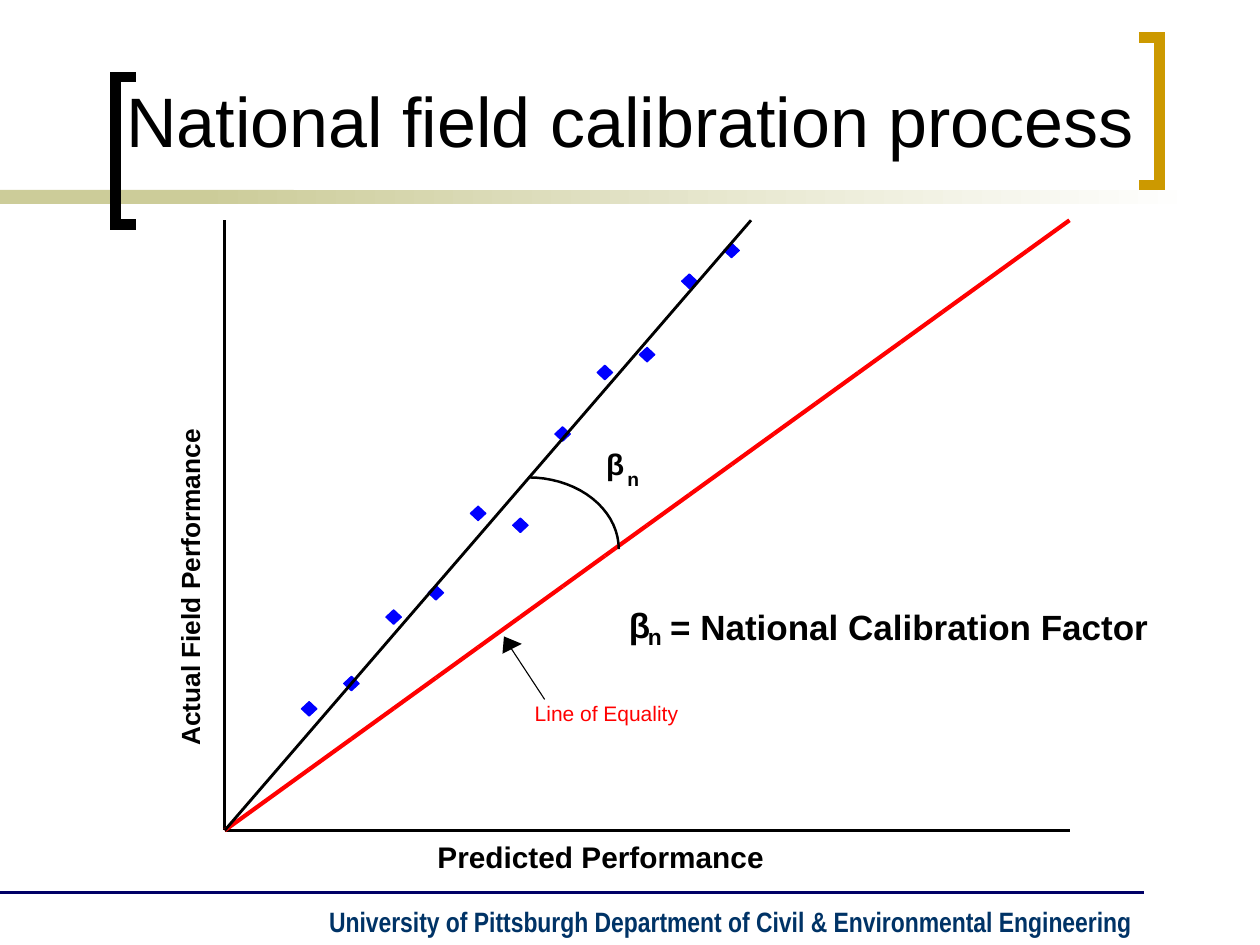
"""Build the national field calibration slide."""
import itertools
import math
from dataclasses import dataclass

import pptx
import pptx.dml.color
import pptx.enum.shapes
import pptx.enum.text
import pptx.oxml
import pptx.oxml.ns
import pptx.util

Cm = pptx.util.Cm
Pt = pptx.util.Pt
Align = pptx.enum.text.PP_ALIGN
Anchor = pptx.enum.text.MSO_ANCHOR
Preset = pptx.enum.shapes.MSO_SHAPE
Point = tuple[float, float]

COLORS = {
    "black": "000000",
    "white": "FFFFFF",
    "red": "FF0000",
    "blue": "0000FF",
    "khaki": "CCCC99",
    "gold": "CC9900",
    "navy": "000066",
    "footer": "003366",
}
ORIGIN = (4.53, 16.74)
AXIS_TOP = 4.44
AXIS_RIGHT = 21.56
STEPS = 20
X_STEP = (AXIS_RIGHT - ORIGIN[0]) / STEPS
Y_STEP = (ORIGIN[1] - AXIS_TOP) / STEPS
MEASURED_Y = (14.29, 13.78, 12.44, 11.95, 10.35, 10.59, 8.75, 7.51, 7.15, 5.67, 5.05)
MARKER_WIDTH, MARKER_HEIGHT = 0.31, 0.29
ARC_CENTER = (10.65, 11.07)


@dataclass
class Label:
    text: str
    left: float
    top: float
    width: float
    height: float
    size: float
    color: str = "black"
    bold: bool = True
    font: str = "Arial"
    rotation: float = 0
    inset: bool = False
    align: Align = Align.LEFT
    anchor: Anchor = Anchor.TOP


@dataclass
class Stroke:
    start: Point
    end: Point
    color: str
    width: float


@dataclass
class Bracket:
    spine: float
    tip: float
    top: float
    bottom: float
    color: str


FRAME_LABELS = [
    Label("University of Pittsburgh Department of Civil & Environmental Engineering",
          0, 18.11, 23.07, 0.94, 16, "footer", font="Arial Narrow", inset=True,
          align=Align.RIGHT),
    Label("National field calibration process", 2.3, 0.42, 23.7, 2.96, 40,
          bold=False, inset=True, anchor=Anchor.BOTTOM),
]
CHART_LABELS = [
    Label("Predicted Performance", 8.82, 16.9, 6.65, 0.74, 17),
    Label("Actual Field Performance", 0.6, 11.49, 6.45, 0.64, 15, rotation=270),
    Label("β", 12.22, 8.98, 0.33, 0.74, 17),
    Label("n", 12.65, 9.42, 0.23, 0.48, 11),
    Label("Line of Equality", 10.78, 14.12, 2.92, 0.51, 12, "red", bold=False),
    Label("β", 12.68, 12.16, 0.38, 0.86, 20),
    Label("n", 13.06, 12.55, 0.28, 0.56, 13),
    Label("= National Calibration Factor", 13.51, 12.21, 9.71, 0.86, 20),
]
BRACKETS = [
    Bracket(2.33, 2.74, 1.55, 4.53, "black"),
    Bracket(23.37, 22.96, 0.76, 3.73, "gold"),
]
FOOTER_RULE = Stroke((0, 17.99), (23.07, 17.99), "navy", 1.5)
AXES = [
    Stroke((ORIGIN[0], AXIS_TOP), ORIGIN, "black", 1.63),
    Stroke(ORIGIN, (AXIS_RIGHT, ORIGIN[1]), "black", 1.63),
]
EQUALITY_POINTS = [(ORIGIN[0] + step * X_STEP, ORIGIN[1] - step * Y_STEP)
                   for step in (0, *range(2, STEPS + 1))]
EQUALITY = [Stroke(start, end, "red", 2.38)
            for start, end in itertools.pairwise(EQUALITY_POINTS)]
TREND = Stroke(ORIGIN, (15.14, AXIS_TOP), "black", 1.63)
POINTER = Stroke((10.98, 14.1), (10.31, 13.08), "black", 0.63)
POINTER_HEAD = [(10.52, 12.98), (10.16, 12.83), (10.13, 13.18)]


def rgb(name: str) -> pptx.dml.color.RGBColor:
    """Return a named colour."""
    return pptx.dml.color.RGBColor.from_string(COLORS[name])


def add_label(page, label: Label) -> None:
    """Add one line of text."""
    box = page.shapes.add_textbox(
        Cm(label.left), Cm(label.top), Cm(label.width), Cm(label.height))
    box.rotation = label.rotation
    frame = box.text_frame
    frame.word_wrap = label.inset
    frame.vertical_anchor = label.anchor
    if not label.inset:
        frame.margin_left = frame.margin_right = Cm(0)
        frame.margin_top = frame.margin_bottom = Cm(0)
    para = frame.paragraphs[0]
    para.text = label.text
    para.alignment = label.align
    para.font.name = label.font
    para.font.size = Pt(label.size)
    para.font.bold = label.bold
    para.font.color.rgb = rgb(label.color)


def add_stroke(page, stroke: Stroke) -> None:
    """Add a straight line without a shadow."""
    line = page.shapes.add_connector(
        pptx.enum.shapes.MSO_CONNECTOR.STRAIGHT,
        *(Cm(value) for value in stroke.start + stroke.end))
    line.line.color.rgb = rgb(stroke.color)
    line.line.width = Pt(stroke.width)
    line._element.spPr.append(
        pptx.oxml.parse_xml(f"<a:effectLst {pptx.oxml.ns.nsdecls('a')}/>"))


def add_outline(page, points: list[Point], closed: bool):
    """Add a freeform through the given points."""
    corners = [(Cm(x), Cm(y)) for x, y in points]
    builder = page.shapes.build_freeform(*corners[0])
    builder.add_line_segments(corners[1:], close=closed)
    shape = builder.convert_to_shape()
    shape.shadow.inherit = False
    return shape


def add_filled_outline(page, points: list[Point]) -> None:
    """Add a black freeform without a border."""
    shape = add_outline(page, points, True)
    shape.fill.solid()
    shape.fill.fore_color.rgb = rgb("black")
    shape.line.fill.background()


def add_bracket(page, bracket: Bracket) -> None:
    """Add a square bracket with sharp corners."""
    shape = add_outline(page, [
        (bracket.tip, bracket.top), (bracket.spine, bracket.top),
        (bracket.spine, bracket.bottom), (bracket.tip, bracket.bottom)], False)
    shape.fill.background()
    shape.line.color.rgb = rgb(bracket.color)
    shape.line.width = Pt(6)
    shape.line._ln.append(pptx.oxml.parse_xml(
        f"<a:miter {pptx.oxml.ns.nsdecls('a')} lim='800000'/>"))


def add_preset(page, preset: Preset, left: float, top: float,
               width: float, height: float, color: str):
    """Add a preset shape in one colour."""
    shape = page.shapes.add_shape(preset, Cm(left), Cm(top), Cm(width), Cm(height))
    shape.shadow.inherit = False
    shape.fill.solid()
    shape.fill.fore_color.rgb = rgb(color)
    shape.line.fill.background()
    return shape


def add_marker(page, x: float, y: float) -> None:
    """Add a diamond centred on a measured point."""
    marker = add_preset(page, Preset.DIAMOND, x - MARKER_WIDTH / 2, y - MARKER_HEIGHT / 2,
                        MARKER_WIDTH, MARKER_HEIGHT, "blue")
    marker.line.color.rgb = rgb("blue")
    marker.line.width = Pt(0.75)


def quarter_arc(radius_x: float, radius_y: float) -> list[Point]:
    """Return points from the top of an ellipse to its right end."""
    angles = [math.radians(degree) for degree in range(0, 91, 5)]
    return [(ARC_CENTER[0] + radius_x * math.sin(angle),
             ARC_CENTER[1] - radius_y * math.cos(angle)) for angle in angles]


def main() -> None:
    """Draw the slide and save it."""
    deck = pptx.Presentation()
    deck.slide_width, deck.slide_height = Cm(25.4), Cm(19.05)
    page = deck.slides.add_slide(deck.slide_layouts[6])
    add_preset(page, Preset.RECTANGLE, 0, 3.83, 5.92, 0.28, "khaki")
    fade = add_preset(page, Preset.RECTANGLE, 4.01, 3.83, 20.12, 0.28, "khaki")
    fade.fill.gradient()
    fade.fill.gradient_angle = 0
    for position, (stop, color) in enumerate(
            zip(fade.fill.gradient_stops, ("khaki", "white"))):
        stop.position = position
        stop.color.rgb = rgb(color)
    for bracket in BRACKETS:
        add_bracket(page, bracket)
    for label in FRAME_LABELS:
        add_label(page, label)
    for stroke in [FOOTER_RULE, *AXES, *EQUALITY]:
        add_stroke(page, stroke)
    for index, y in enumerate(MEASURED_Y, start=2):
        add_marker(page, ORIGIN[0] + index * X_STEP, y)
    add_stroke(page, TREND)
    add_filled_outline(page, quarter_arc(1.85, 1.47) + quarter_arc(1.8, 1.42)[::-1])
    add_stroke(page, POINTER)
    add_filled_outline(page, POINTER_HEAD)
    for label in CHART_LABELS:
        add_label(page, label)
    deck.save("out.pptx")


if __name__ == "__main__":
    main()
